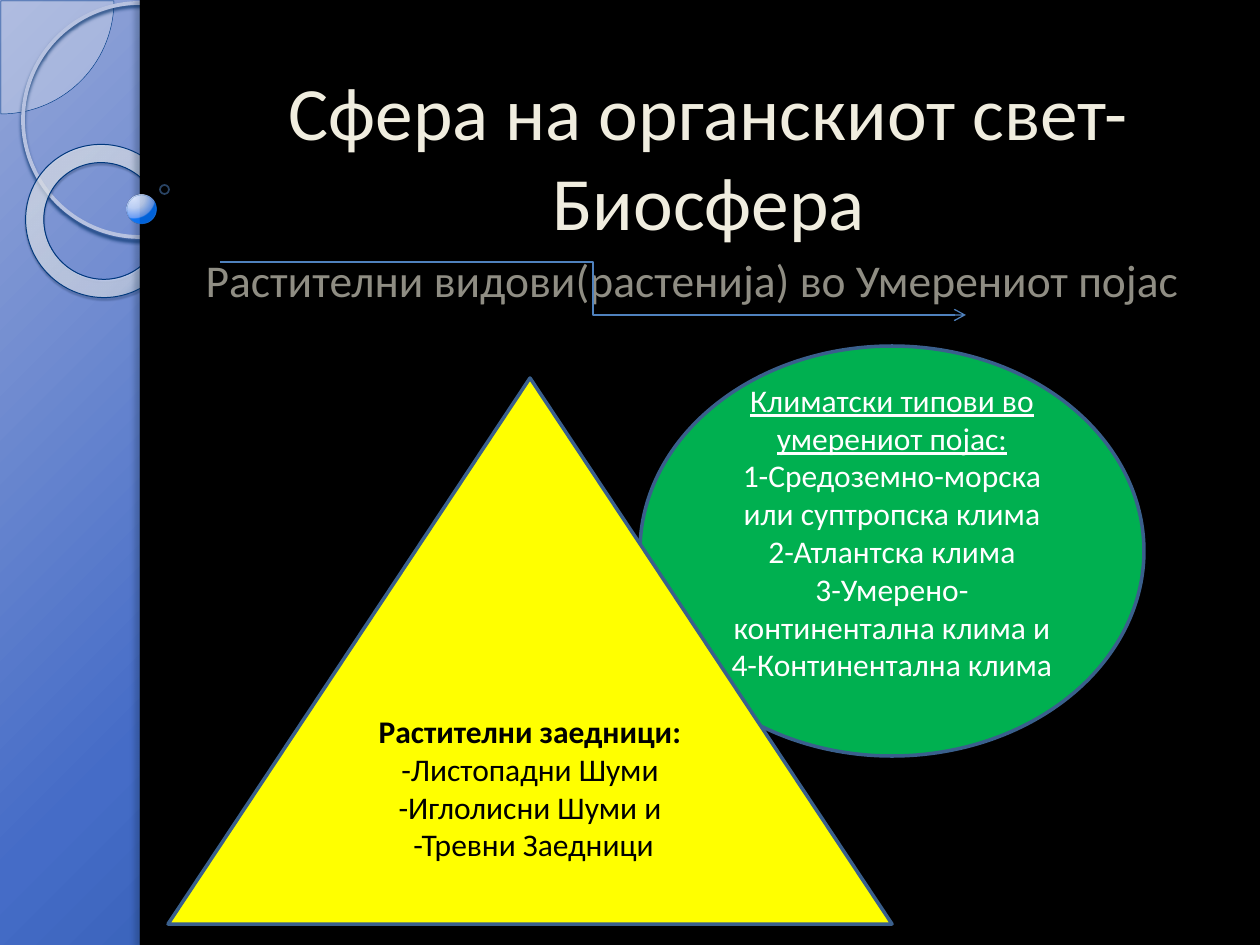
import pptx
import pptx.util
import pptx.dml.color
import pptx.enum.shapes
import pptx.enum.text
import pptx.oxml.ns
from lxml import etree

EMU_PER_PX = 914400 / 126
FONT = "Calibri"
SHAPE = pptx.enum.shapes.MSO_SHAPE
ALIGN = pptx.enum.text.PP_ALIGN
ANCHOR = pptx.enum.text.MSO_ANCHOR
COLORS = {
    "black": "000000", "white": "FFFFFF", "title": "F0EDDF", "subtitle": "8F8D83",
    "yellow": "FFFF00", "green": "00B050", "outline": "3A5F8C", "arrow": "4F81BD",
    "pie": "E8EAF1", "pie_line": "003C86", "ring": "B7C2E0", "donut_line": "00387D",
    "ball_line": "467BBA", "dot_line": "4672A7",
}
BACKGROUND = [(0, "94A6D8", 100), (40, "456CC7", 100), (100, "003678", 100)]
DONUT = [(0, "F0F2F8", 70), (70, "F6F8FB", 55), (100, "003E8A", 60)]
BALL = [(0, "DEE9FF", 95), (50, "C2D5F9", 90), (95, "6BA1FC", 88), (100, "0174FF", 85)]


def px(*lengths):
    """Turn pixel lengths into a list of EMU."""
    return [round(n * EMU_PER_PX) for n in lengths]


def rgb(name):
    """Look up a named colour."""
    return pptx.dml.color.RGBColor.from_string(COLORS[name])


def sub(parent, tag, **attrs):
    """Append a DrawingML element with the given attributes."""
    values = {key: str(value) for key, value in attrs.items()}
    return etree.SubElement(parent, pptx.oxml.ns.qn("a:" + tag), values)


def set_alpha(fill, percent):
    """Make a solid fill partly transparent."""
    fill_color = fill._xPr.find(".//" + pptx.oxml.ns.qn("a:srgbClr"))
    sub(fill_color, "alpha", val=percent * 1000)


def set_gradient(fill, owner, stops, focus):
    """Give a fill a circular gradient with its focus rectangle in percent."""
    fill.gradient()
    grad = owner.find(".//" + pptx.oxml.ns.qn("a:gradFill"))
    for child in list(grad):
        grad.remove(child)
    stop_list = sub(grad, "gsLst")
    for position, color, alpha in stops:
        stop = sub(stop_list, "gs", pos=position * 1000)
        sub(sub(stop, "srgbClr", val=color), "alpha", val=alpha * 1000)
    circle = sub(grad, "path", path="circle")
    sub(circle, "fillToRect", **{side: n * 1000 for side, n in zip("ltrb", focus)})


def add_shadow(sp, color, alpha, blur, distance, angle):
    """Give a shape an outer shadow measured in points and degrees."""
    effects = sp._element.spPr.find(pptx.oxml.ns.qn("a:effectLst"))
    shadow = sub(effects, "outerShdw", blurRad=round(blur * 12700),
                 dist=round(distance * 12700), dir=angle * 60000, rotWithShape=0)
    sub(sub(shadow, "srgbClr", val=color), "alpha", val=alpha * 1000)


def add_preset(s, kind, box, fill=None, line=None, width=1, line_alpha=100):
    """Add a preset shape with a plain fill and outline."""
    sp = s.shapes.add_shape(kind, *px(*box))
    sp.shadow.inherit = False
    if fill:
        sp.fill.solid()
        sp.fill.fore_color.rgb = rgb(fill)
    else:
        sp.fill.background()
    if line:
        sp.line.color.rgb = rgb(line)
        sp.line.width = pptx.util.Pt(width)
        set_alpha(sp.line.fill, line_alpha)
    else:
        sp.line.fill.background()
    return sp


def style_paragraph(p, size, color, align):
    """Set the font and alignment of a paragraph."""
    p.alignment = align
    p.font.name = FONT
    p.font.size = pptx.util.Pt(size)
    p.font.color.rgb = rgb(color)


def fill_placeholder(s, sp, box, text, size, color, align, anchor):
    """Place a placeholder in front of the decoration and fill it."""
    s.shapes._spTree.append(sp._element)
    sp.left, sp.top, sp.width, sp.height = px(*box)
    tf = sp.text_frame
    tf.text = text
    tf.word_wrap = True
    tf.auto_size = pptx.enum.text.MSO_AUTO_SIZE.NONE
    tf.vertical_anchor = anchor
    style_paragraph(tf.paragraphs[0], size, color, align)
    return tf


def add_topic(s, kind, box, fill, color, lines):
    """Add an outlined shape with centred lines and return its text frame."""
    tf = add_preset(s, kind, box, fill, "outline", 2).text_frame
    tf.word_wrap = True
    tf.vertical_anchor = ANCHOR.MIDDLE
    tf.text = "\n".join(lines)
    for p in tf.paragraphs:
        style_paragraph(p, 18, color, ALIGN.CENTER)
    return tf


def add_decoration(s):
    """Draw the gradient strip, its circles and the black panel."""
    set_gradient(s.background.fill, s._element, BACKGROUND, (-24, -20, 124, 120))
    pie = add_preset(s, SHAPE.PIE, (-112, -112, 226, 226), "pie", "pie_line", 0.25)
    pie.adjustments[0], pie.adjustments[1] = 0, 54.02
    set_alpha(pie.fill, 33)
    ring = add_preset(s, SHAPE.OVAL, (23, 3, 234, 234), None, "ring", 2.15)
    add_shadow(ring, "06346E", 85, 2, 2, 90)
    donut = add_preset(s, SHAPE.DONUT, (25, 145, 155, 152), None, "donut_line", 0.58)
    donut.adjustments[0] = 0.12
    donut.rotation = 38.6
    set_gradient(donut.fill, donut._element.spPr, DONUT, (-408, -50, 508, 150))
    add_shadow(donut, "001A39", 35, 1, 1.2, 75)
    add_preset(s, SHAPE.RECTANGLE, (140, 0, 1120, 945), "black")
    edge = add_preset(s, SHAPE.RECTANGLE, (140, 0, 10, 945), "black")
    add_shadow(edge, "0D2440", 25, 3, 3, 180)
    ball = add_preset(s, SHAPE.OVAL, (127, 195, 29, 29), None, "ball_line", 0.16, 60)
    set_gradient(ball.fill, ball._element.spPr, BALL, (25, 12, 75, 88))
    add_preset(s, SHAPE.OVAL, (160, 185, 9, 9), None, "dot_line", 1, 60)


def add_bent_arrow(s, start, end):
    """Add an elbow connector with an open arrowhead."""
    elbow = pptx.enum.shapes.MSO_CONNECTOR.ELBOW
    arrow = s.shapes.add_connector(elbow, *px(*start, *end))
    arrow.line.color.rgb = rgb("arrow")
    arrow.line.width = pptx.util.Pt(0.75)
    sub(arrow.line._get_or_add_ln(), "tailEnd", type="arrow")
    sub(arrow._element.spPr, "effectLst")


def main():
    """Build the slide and save it."""
    prs = pptx.Presentation()
    prs.slide_width, prs.slide_height = px(1260, 945)
    s = prs.slides.add_slide(prs.slide_layouts[0])
    add_decoration(s)

    fill_placeholder(s, s.shapes.title, (198, 49, 1021, 203),
                     "Сфера на органскиот свет-Биосфера",
                     43, "title", ALIGN.CENTER, ANCHOR.BOTTOM)
    tf = fill_placeholder(s, s.placeholders[1], (189, 252, 1021, 599),
                          "Растителни видови(растенија) во Умерениот појас",
                          26, "subtitle", ALIGN.LEFT, ANCHOR.TOP)
    tf.margin_top = 0
    p = tf.paragraphs[0]
    p.space_before = pptx.util.Pt(6)
    p._p.get_or_add_pPr().set("marL", str(px(4)[0]))

    climate = add_topic(s, SHAPE.OVAL, (640, 346, 504, 410), "green", "white", [
        "Климатски типови во умерениот појас:",
        "1-Средоземно-морска или суптропска клима",
        "2-Атлантска клима",
        "3-Умерено-континентална клима и",
        "4-Континентална клима",
    ])
    climate.margin_bottom = px(44)[0]
    climate.paragraphs[0].font.underline = True
    add_bent_arrow(s, (220, 262), (966, 315))
    plants = add_topic(s, SHAPE.ISOSCELES_TRIANGLE, (168, 378, 724, 546), "yellow", "black", [
        "Растителни заедници:",
        "-Листопадни Шуми",
        "-Иглолисни Шуми и",
        " -Тревни Заедници",
    ])
    plants.paragraphs[0].font.bold = True

    prs.save("out.pptx")


if __name__ == "__main__":
    main()
